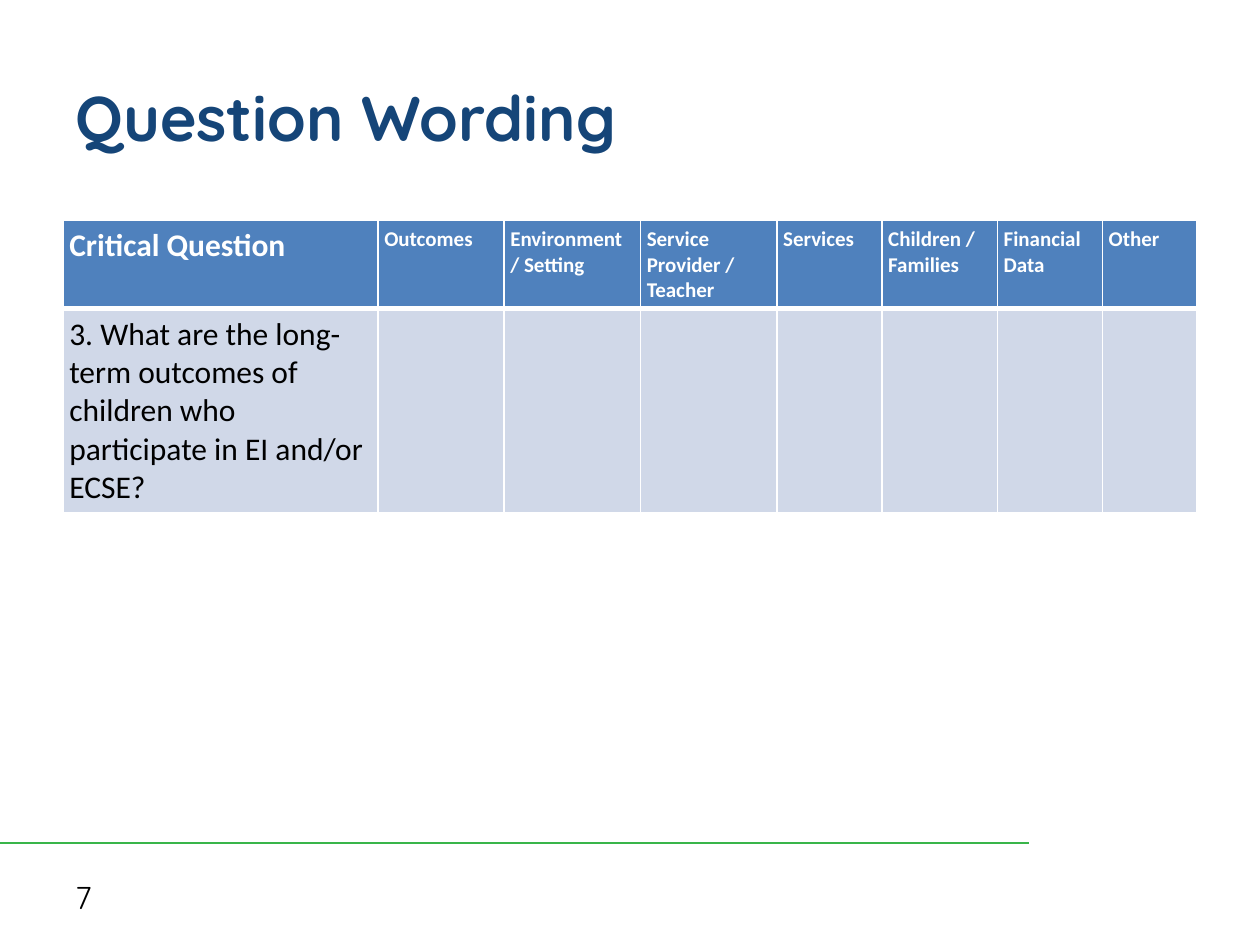
from lxml import etree
from pptx import Presentation
from pptx import util as u
from pptx.dml.color import RGBColor
from pptx.enum import shapes, text
from pptx.oxml.ns import qn

COLORS = {
    "title": "154578",
    "rule": "39B54A",
    "header": "4F81BD",
    "body": "D0D8E8",
    "white": "FFFFFF",
    "black": "000000",
}
HEADINGS = [
    ("Critical Question", 30),
    ("Outcomes", 12),
    ("Environment / Setting", 13),
    ("Service Provider / Teacher", 13),
    ("Services", 10),
    ("Children / Families", 11),
    ("Financial Data", 10),
    ("Other", 9),
]
QUESTION = ("3. What are the long-term outcomes of children who "
            "participate in EI and/or ECSE?")


class SlideBuilder:
    heading_font = "Quicksand"
    table_font = "Calibri"
    cells_per_inch = 12

    def __init__(self, deck):
        self.page = deck.slides.add_slide(deck.slide_layouts[5])

    def grid(self, *units):
        return [u.Inches(unit / self.cells_per_inch) for unit in units]

    def color(self, name):
        return RGBColor.from_string(COLORS[name])

    def add_words(self, frame, words, font, size, color, bold=False):
        para = frame.paragraphs[0]
        para.alignment = text.PP_ALIGN.LEFT
        span = para.add_run()
        span.text = words
        span.font.name = font
        span.font.size = u.Pt(size)
        span.font.bold = bold
        span.font.color.rgb = self.color(color)

    def title(self, words, area):
        box = self.page.shapes.title
        box.left, box.top, box.width, box.height = self.grid(*area)
        box.text_frame.vertical_anchor = text.MSO_ANCHOR.MIDDLE
        self.add_words(box.text_frame, words, self.heading_font, 36, "title", True)

    def label(self, words, area):
        frame = self.page.shapes.add_textbox(*self.grid(*area)).text_frame
        frame.word_wrap = True
        frame.vertical_anchor = text.MSO_ANCHOR.MIDDLE
        self.add_words(frame, words, self.heading_font, 18, "black")

    def rule(self, ends):
        line = self.page.shapes.add_connector(
            shapes.MSO_CONNECTOR.STRAIGHT, *self.grid(*ends))
        line.line.color.rgb = self.color("rule")
        line.line.width = u.Pt(1.5)
        etree.SubElement(line._element.spPr, qn("a:effectLst"))

    def cell(self, cell, fill, borders):
        cell.margin_left = cell.margin_right = u.Inches(0.05)
        cell.margin_top = cell.margin_bottom = u.Inches(0.05)
        props = cell._tc.get_or_add_tcPr()
        for side, points in zip("LRTB", borders):
            edge = etree.SubElement(props, qn("a:ln" + side), w=str(u.Pt(points)))
            solid = etree.SubElement(edge, qn("a:solidFill"))
            etree.SubElement(solid, qn("a:srgbClr"), val=COLORS["white"])
        cell.fill.solid()
        cell.fill.fore_color.rgb = self.color(fill)

    def table(self, headings, question, left, top, heights):
        widths = [width for _, width in headings]
        area = self.grid(left, top, sum(widths), sum(heights))
        table = self.page.shapes.add_table(len(heights), len(widths), *area).table
        for row, height in zip(table.rows, self.grid(*heights)):
            row.height = height
        for index, (heading, width) in enumerate(headings):
            table.columns[index].width = self.grid(width)[0]
            header = table.cell(0, index)
            self.cell(header, "header", (1, 1, 1, 3))
            self.add_words(header.text_frame, heading, self.table_font,
                           12 if index else 18, "white", True)
            self.cell(table.cell(1, index), "body", (1, 1, 3, 1))
        self.add_words(table.cell(1, 0).text_frame, question,
                       self.table_font, 18, "black")


def main():
    deck = Presentation()
    deck.slide_width, deck.slide_height = u.Inches(10), u.Inches(7.5)
    slide = SlideBuilder(deck)
    slide.rule((0, 80.3, 98, 80.3))
    slide.label("7", (6, 83, 28, 4.8))
    slide.title("Question Wording", (6, 3.6, 108, 15))
    slide.table(HEADINGS, QUESTION, 6, 21, (8.4, 19.4))
    deck.save("out.pptx")


if __name__ == "__main__":
    main()
